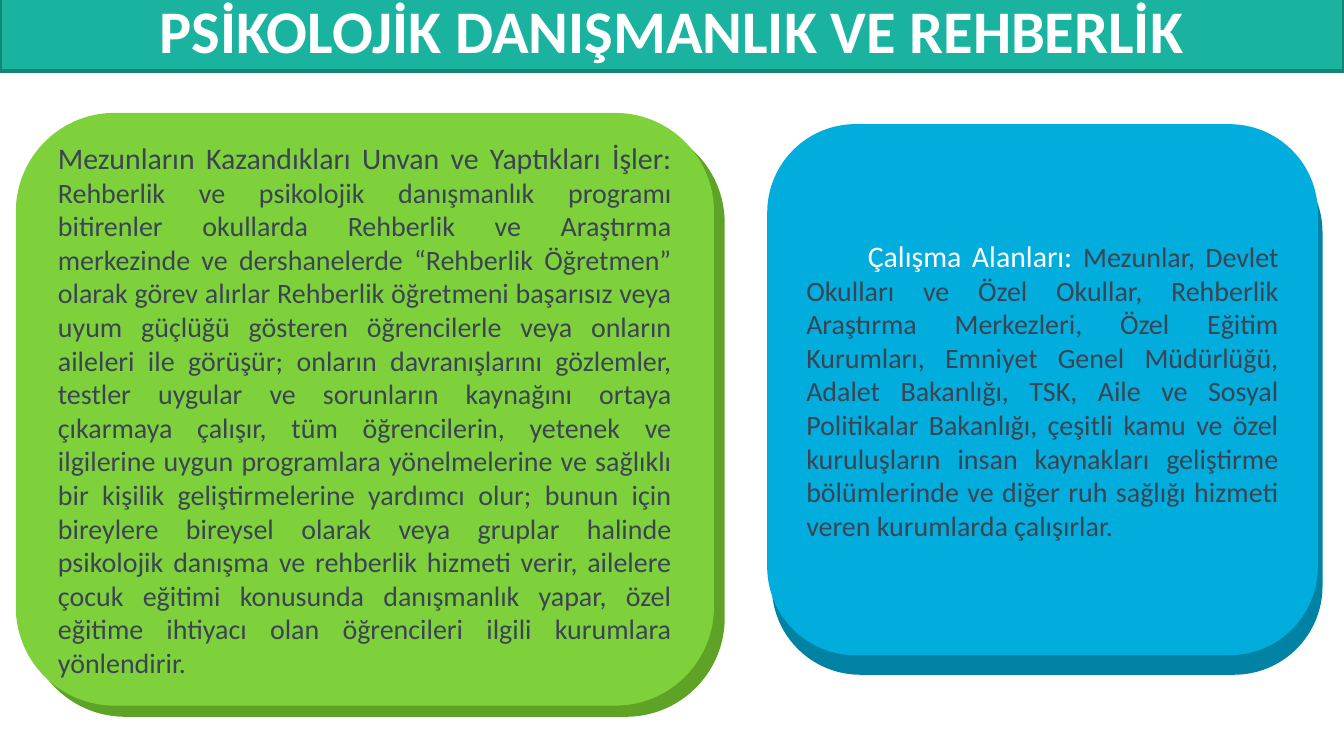
from dataclasses import dataclass

from pptx import Presentation
from pptx.dml.color import RGBColor
from pptx.enum.shapes import MSO_SHAPE as Preset
from pptx.enum.text import MSO_ANCHOR as Anchor, PP_ALIGN as Align
from pptx.shapes.autoshape import Shape
from pptx.slide import Slide
from pptx.util import Pt

COLORS = {
    "white": "FFFFFF",
    "slate": "3B4453",
    "teal": "1AB39F",
    "teal_dark": "138476",
    "green": "7FD13B",
    "green_dark": "5FA326",
    "blue": "00ADDC",
    "blue_dark": "0082A5",
}
FONT = "Calibri"


@dataclass(frozen=True)
class TextRun:
    text: str
    size: float
    color: str
    bold: bool = False


@dataclass(frozen=True)
class Box:
    left: float
    top: float
    width: float
    height: float

    def moved(self, dx: float, dy: float) -> "Box":
        return Box(self.left + dx, self.top + dy, self.width, self.height)


@dataclass(frozen=True)
class Panel:
    box: Box
    fill: str
    back_fill: str
    back_offset: tuple[float, float]
    runs: tuple[TextRun, ...]
    first_indent: float = 0


def color(name: str) -> RGBColor:
    return RGBColor.from_string(COLORS[name])


def add_block(slide: Slide, preset: Preset, box: Box, fill: str) -> Shape:
    block = slide.shapes.add_shape(
        preset, Pt(box.left), Pt(box.top), Pt(box.width), Pt(box.height))
    block.shadow.inherit = False
    block.fill.solid()
    block.fill.fore_color.rgb = color(fill)
    block.line.fill.background()
    return block


def write(block: Shape, runs: tuple[TextRun, ...], align: Align,
          first_indent: float = 0) -> None:
    frame = block.text_frame
    frame.word_wrap = True
    frame.vertical_anchor = Anchor.MIDDLE
    paragraph = frame.paragraphs[0]
    paragraph.alignment = align
    if first_indent:
        paragraph._p.get_or_add_pPr().set("indent", str(Pt(first_indent)))
    for part in runs:
        run = paragraph.add_run()
        run.text = part.text
        run.font.name = FONT
        run.font.size = Pt(part.size)
        run.font.bold = part.bold
        run.font.color.rgb = color(part.color)


def add_panel(slide: Slide, panel: Panel) -> None:
    add_block(slide, Preset.ROUNDED_RECTANGLE,
              panel.box.moved(*panel.back_offset), panel.back_fill)
    front = add_block(slide, Preset.ROUNDED_RECTANGLE, panel.box, panel.fill)
    write(front, panel.runs, Align.JUSTIFY, panel.first_indent)


TITLE = TextRun("PSİKOLOJİK DANIŞMANLIK VE REHBERLİK", 32.4, "white", bold=True)

PANELS = (
    # Titles and duties of graduates
    Panel(
        Box(8.5, 60.5, 374, 317.5), "green", "green_dark", (5.75, 6),
        (
            TextRun("Mezunların Kazandıkları Unvan ve Yaptıkları İşler: ",
                    16, "slate"),
            TextRun(
                "Rehberlik ve psikolojik danışmanlık programı bitirenler "
                "okullarda Rehberlik ve Araştırma merkezinde ve dershanelerde "
                "“Rehberlik Öğretmen” olarak görev alırlar Rehberlik öğretmeni "
                "başarısız veya uyum güçlüğü gösteren öğrencilerle veya onların "
                "aileleri ile görüşür; onların davranışlarını gözlemler, testler "
                "uygular ve sorunların kaynağını ortaya çıkarmaya çalışır, tüm "
                "öğrencilerin, yetenek ve ilgilerine uygun programlara "
                "yönelmelerine ve sağlıklı bir kişilik geliştirmelerine yardımcı "
                "olur; bunun için bireylere bireysel olarak veya gruplar halinde "
                "psikolojik danışma ve rehberlik hizmeti verir, ailelere çocuk "
                "eğitimi konusunda danışmanlık yapar, özel eğitime ihtiyacı olan "
                "öğrencileri ilgili kurumlara yönlendirir.",
                15, "slate"),
        ),
    ),
    # Fields of work
    Panel(
        Box(411, 66.5, 295, 284.5), "blue", "blue_dark", (2.5, 10.5),
        (
            TextRun("Çalışma Alanları: ", 16, "white"),
            TextRun(
                "Mezunlar, Devlet Okulları ve Özel Okullar, Rehberlik Araştırma "
                "Merkezleri, Özel Eğitim Kurumları, Emniyet Genel Müdürlüğü, "
                "Adalet Bakanlığı, TSK, Aile ve Sosyal Politikalar Bakanlığı, "
                "çeşitli kamu ve özel kuruluşların insan kaynakları geliştirme "
                "bölümlerinde ve diğer ruh sağlığı hizmeti veren kurumlarda "
                "çalışırlar.",
                15, "slate"),
        ),
        first_indent=33,
    ),
)


def main() -> None:
    deck = Presentation()
    deck.slide_width, deck.slide_height = Pt(720), Pt(405)
    slide = deck.slides.add_slide(deck.slide_layouts[6])

    # Title band
    band = add_block(slide, Preset.RECTANGLE, Box(0, -7, 720, 45), "teal")
    band.line.color.rgb = color("teal_dark")
    band.line.width = Pt(2)
    write(band, (TITLE,), Align.CENTER)

    # Two panels, each with a darker one behind
    for panel in PANELS:
        add_panel(slide, panel)

    deck.save("out.pptx")


if __name__ == "__main__":
    main()
